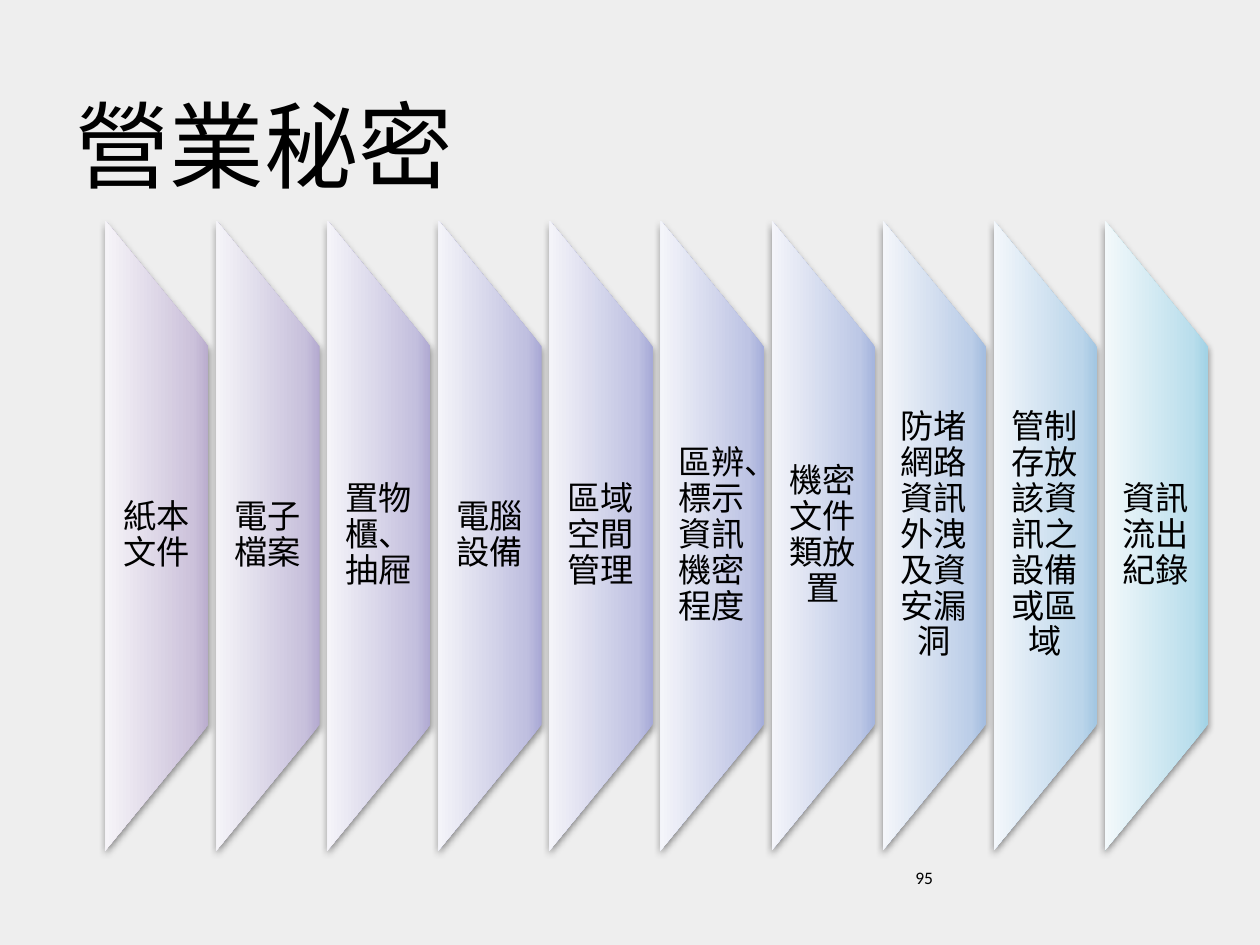
from dataclasses import dataclass

from lxml import etree
from pptx import Presentation
from pptx.dml.color import RGBColor
from pptx.enum.shapes import MSO_SHAPE
from pptx.enum.text import MSO_ANCHOR, PP_ALIGN
from pptx.oxml.ns import qn
from pptx.shapes.autoshape import Shape
from pptx.slide import Slide
from pptx.util import Pt

PANEL_SHAPE = MSO_SHAPE.FLOWCHART_MANUAL_OPERATION
TOP, MIDDLE, BOTTOM = MSO_ANCHOR.TOP, MSO_ANCHOR.MIDDLE, MSO_ANCHOR.BOTTOM
LEFT, CENTER = PP_ALIGN.LEFT, PP_ALIGN.CENTER

COLORS = {"background": "EEEEEE", "text": "000000", "shadow": "000000"}
BODY_FONT = "Calibri"
EAST_ASIAN_FONT = "Noto Sans CJK SC"

# Panel grid, in points
FIRST_LEFT, PANEL_TOP, PANEL_STEP = 60.16, 126, 63.45
PANEL_WIDTH, PANEL_HEIGHT = 59.04, 360
LABEL_TOP, LABEL_HEIGHT = 198, 216
GRADIENT_POSITIONS = (0, 15, 100)


@dataclass
class Panel:
    label: str
    gradient: tuple[str, str, str]


@dataclass
class TextStyle:
    size: float
    font: str = BODY_FONT
    anchor: MSO_ANCHOR = TOP
    alignment: PP_ALIGN = LEFT
    line_spacing: float = 1.0
    margins: tuple[float, float, float, float] = (7.2, 3.6, 7.2, 3.6)


PANELS = [
    Panel("紙本文件", ("B9ACCD", "CCC2DB", "F6F4F8")),
    Panel("電子檔案", ("B4AAD0", "C8C1DC", "F5F4F8")),
    Panel("置物櫃、抽屜", ("AFA9D2", "C4C0DE", "F5F4F9")),
    Panel("電腦設備", ("A9A8D5", "C0C0E0", "F4F4F9")),
    Panel("區域空間管理", ("A6AAD7", "BFC1E2", "F4F4F9")),
    Panel("區辨、標示資訊機密程度", ("A5AEDA", "BEC4E4", "F4F5FA")),
    Panel("機密文件類放置", ("A4B4DD", "BDC8E6", "F4F5FA")),
    Panel("防堵網路資訊外洩及資安漏洞", ("A3BCDF", "BCCEE8", "F4F6FA")),
    Panel("管制存放該資訊之設備或區域", ("A2C6E2", "BBD5EA", "F3F7FB")),
    Panel("資訊流出紀錄", ("A1D2E5", "BADEEC", "F3F9FB")),
]
TITLE_STYLE = TextStyle(54, EAST_ASIAN_FONT, BOTTOM)
LABEL_STYLE = TextStyle(19, BODY_FONT, MIDDLE, CENTER, 0.9, (9.5, 0, 9.9, 0))
NUMBER_STYLE = TextStyle(10)


def set_values(target: object, values: dict) -> None:
    for name, value in values.items():
        setattr(target, name, value)


def add_text(slide: Slide, text: str, left: float, top: float,
             width: float, height: float, style: TextStyle) -> None:
    box = slide.shapes.add_textbox(Pt(left), Pt(top), Pt(width), Pt(height))
    frame = box.text_frame
    sides = ("margin_left", "margin_top", "margin_right", "margin_bottom")
    set_values(frame, {"word_wrap": True, "vertical_anchor": style.anchor,
                       **{side: Pt(size) for side, size in zip(sides, style.margins)}})
    paragraph = frame.paragraphs[0]
    set_values(paragraph, {"alignment": style.alignment,
                           "line_spacing": style.line_spacing})
    run = paragraph.add_run()
    run.text = text
    set_values(run.font, {"size": Pt(style.size), "name": style.font})
    run.font.color.rgb = RGBColor.from_string(COLORS["text"])
    properties = run._r.get_or_add_rPr()
    etree.SubElement(properties, qn("a:ea"), typeface=EAST_ASIAN_FONT)


def add_color(parent: etree._Element, color: str) -> etree._Element:
    return etree.SubElement(parent, qn("a:srgbClr"), val=color)


def fill_gradient(shape: Shape, colors: tuple[str, str, str]) -> None:
    shape.fill.gradient()
    shape.fill.gradient_angle = 90
    stops = shape._element.spPr.find(qn("a:gradFill")).find(qn("a:gsLst"))
    for stop in list(stops):
        stops.remove(stop)
    for position, color in zip(GRADIENT_POSITIONS, colors):
        stop = etree.SubElement(stops, qn("a:gs"), pos=str(position * 1000))
        add_color(stop, color)


def add_shadow(shape: Shape) -> None:
    shape.shadow.inherit = False
    effects = shape._element.spPr.find(qn("a:effectLst"))
    shadow = etree.SubElement(effects, qn("a:outerShdw"), blurRad=str(Pt(4)),
                              dist=str(Pt(2)), dir="5400000", rotWithShape="0")
    color = add_color(shadow, COLORS["shadow"])
    etree.SubElement(color, qn("a:alpha"), val="43000")


def add_panel(slide: Slide, panel: Panel, left: float) -> None:
    # The shape lies flat and is turned about its centre to stand upright
    offset = (PANEL_HEIGHT - PANEL_WIDTH) / 2
    shape = slide.shapes.add_shape(PANEL_SHAPE, Pt(left - offset), Pt(PANEL_TOP + offset),
                                   Pt(PANEL_HEIGHT), Pt(PANEL_WIDTH))
    shape.rotation = 270
    shape.line.fill.background()
    fill_gradient(shape, panel.gradient)
    add_shadow(shape)
    add_text(slide, panel.label, left, LABEL_TOP, PANEL_WIDTH, LABEL_HEIGHT, LABEL_STYLE)


def main() -> None:
    presentation = Presentation()
    set_values(presentation, {"slide_width": Pt(720), "slide_height": Pt(540)})
    slide = presentation.slides.add_slide(presentation.slide_layouts[6])
    background = slide.background.fill
    background.solid()
    background.fore_color.rgb = RGBColor.from_string(COLORS["background"])

    # Row of upright panels
    for index, panel in enumerate(PANELS):
        add_panel(slide, panel, FIRST_LEFT + index * PANEL_STEP)

    # Title and slide number
    add_text(slide, "營業秘密", 36, 28, 648, 90, TITLE_STYLE)
    add_text(slide, "95", 516, 492, 168, 37.5, NUMBER_STYLE)

    presentation.save("out.pptx")


if __name__ == "__main__":
    main()
